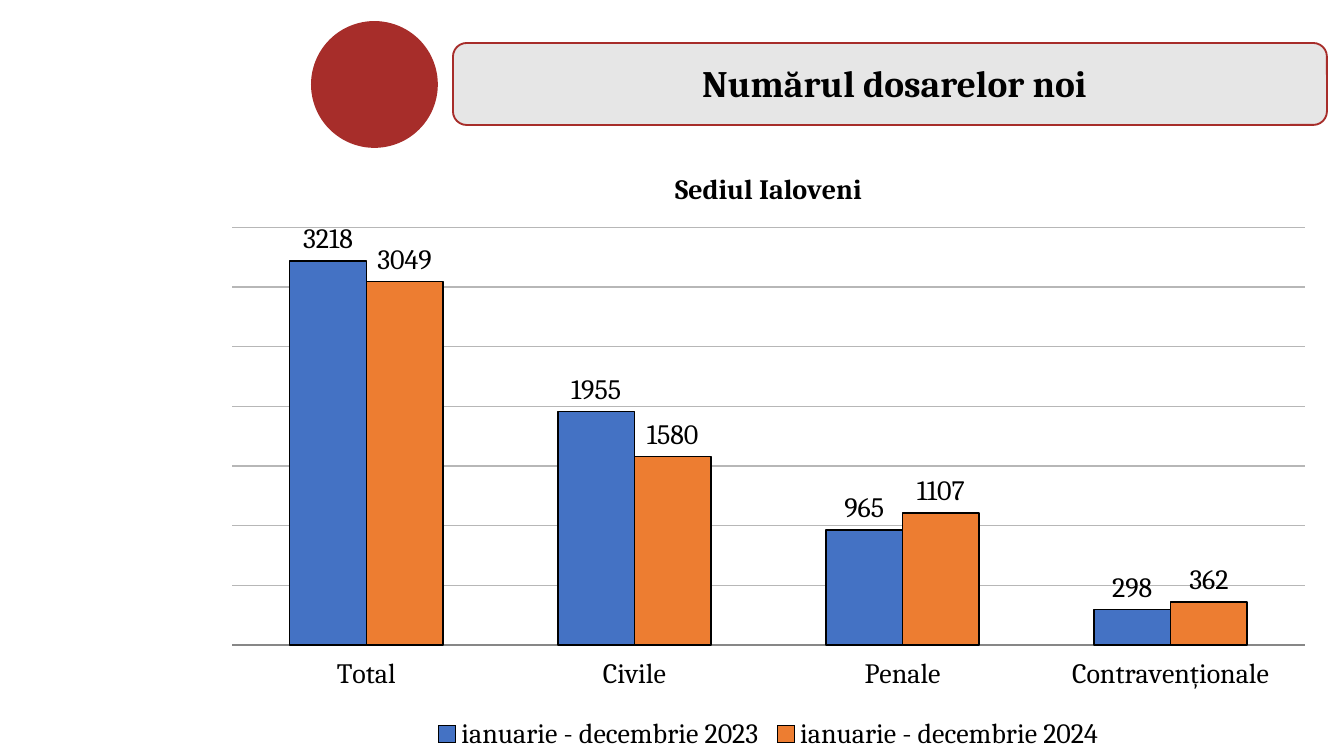
"""Build the slide comparing new case numbers at the Ialoveni office."""
from dataclasses import dataclass

from pptx import Presentation
from pptx.chart.data import CategoryChartData
from pptx.dml.color import RGBColor as RGB
from pptx.enum.chart import XL_CHART_TYPE as CT, XL_LABEL_POSITION as LP
from pptx.enum.chart import XL_LEGEND_POSITION as LEG, XL_TICK_LABEL_POSITION as TLP, XL_TICK_MARK as TM
from pptx.enum.shapes import MSO_SHAPE as SHP
from pptx.enum.text import MSO_ANCHOR as ANC, MSO_AUTO_SIZE as AUTO, PP_ALIGN as AL
from pptx.util import Emu, Pt


@dataclass(frozen=True)
class Theme:
    font: str = "Cambria"
    ink: RGB = RGB(0, 0, 0)
    red: RGB = RGB(0xA7, 0x2D, 0x2A)
    panel: RGB = RGB(0xE6, 0xE6, 0xE6)
    grid: RGB = RGB(0xB7, 0xB7, 0xB7)
    blue: RGB = RGB(0x44, 0x72, 0xC4)
    orange: RGB = RGB(0xED, 0x7D, 0x31)
    title: Pt = Pt(20)
    body: Pt = Pt(15)
    thin: Pt = Pt(0.75)


T = Theme()


def px(*values):
    return [Emu(round(v * 914400 / 134.4)) for v in values]


def set_font(font, size, bold=False):
    font.name, font.size, font.bold = T.font, size, bold
    font.color.rgb = T.ink


prs = Presentation()
prs.slide_width, prs.slide_height = px(1344, 756)
s = prs.slides.add_slide(prs.slide_layouts[5])

for kind, box, fill in (
    (SHP.OVAL, (312, 22, 125, 125), T.red),
    (SHP.ROUNDED_RECTANGLE, (453, 43, 874, 82), T.panel),
):
    sp = s.shapes.add_shape(kind, *px(*box))
    sp.shadow.inherit = False
    sp.fill.solid()
    sp.fill.fore_color.rgb = fill
    sp.line.color.rgb = T.red
    sp.line.width = Pt(1)

title = s.shapes.title
title.left, title.top, title.width, title.height = px(445, 58, 899, 54)
sp._element.addnext(title._element)
tf = title.text_frame
tf.text = "Numărul dosarelor noi"
tf.word_wrap = True
tf.auto_size = AUTO.NONE
tf.vertical_anchor = ANC.MIDDLE
p = tf.paragraphs[0]
p.alignment = AL.CENTER
p.line_spacing = 0.9
set_font(p.font, T.title, True)

data = CategoryChartData()
data.categories = ["Total", "Civile", "Penale", "Contravenționale"]
data.add_series("ianuarie - decembrie 2023", [3218, 1955, 965, 298])
data.add_series("ianuarie - decembrie 2024", [3049, 1580, 1107, 362])
chart = s.shapes.add_chart(CT.COLUMN_CLUSTERED, *px(210, 147, 1117, 609), data).chart
set_font(chart.font, T.body)

chart.has_title = True
tf = chart.chart_title.text_frame
tf.text = "Sediul Ialoveni"
set_font(tf.paragraphs[0].font, T.body, True)
chart.chart_title.include_in_layout = False

chart.has_legend = True
chart.legend.position = LEG.BOTTOM
chart.legend.include_in_layout = False
set_font(chart.legend.font, T.body)

cat = chart.category_axis
cat.major_tick_mark = TM.NONE
cat.tick_label_position = TLP.LOW
cat.format.line.color.rgb = RGB(0x87, 0x87, 0x87)
cat.format.line.width = T.thin
set_font(cat.tick_labels.font, T.body)

val = chart.value_axis
val.visible = False
val.minimum_scale, val.maximum_scale, val.major_unit = 0, 3500, 500
val.has_major_gridlines = True
val.major_gridlines.format.line.color.rgb = T.grid
val.major_gridlines.format.line.width = T.thin

plot = chart.plots[0]
plot.gap_width = 150
plot.overlap = 0
plot.vary_by_categories = False
for series, color in zip(plot.series, (T.blue, T.orange)):
    series.invert_if_negative = False
    series.format.fill.solid()
    series.format.fill.fore_color.rgb = color
    series.format.line.color.rgb = T.ink
    series.format.line.width = T.thin
    labels = series.data_labels
    labels.show_value = True
    labels.position = LP.OUTSIDE_END
    set_font(labels.font, T.body)

prs.save("out.pptx")
